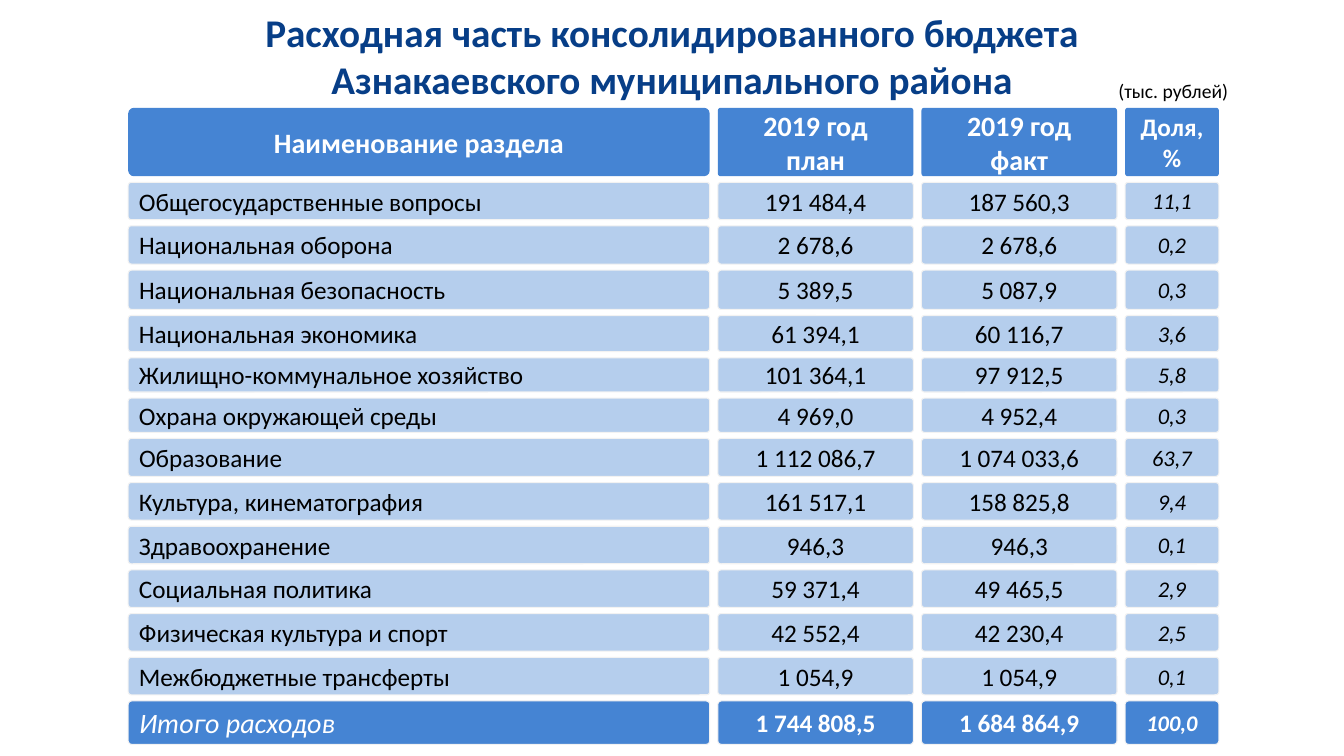
from pptx import Presentation
from pptx.dml.color import RGBColor
from pptx.enum.shapes import MSO_SHAPE
from pptx.enum.text import MSO_ANCHOR, MSO_AUTO_SIZE, PP_ALIGN
from pptx.util import Pt

ROUNDED = MSO_SHAPE.ROUNDED_RECTANGLE
MIDDLE = MSO_ANCHOR.MIDDLE
GROW = MSO_AUTO_SIZE.SHAPE_TO_FIT_TEXT
LEFT, CENTER = PP_ALIGN.LEFT, PP_ALIGN.CENTER

FONT = "Calibri"
COLORS = {
    "title": "073E87",
    "accent": "4584D3",
    "row": "B5CEED",
    "outline": "F2F2F2",
    "light": "FFFFFF",
    "dark": "000000",
}

COLUMN_WIDTHS = [415.4, 139.7, 139.7, 67]
COLUMN_GAP = 5.75
ROW_GAP = 4.4
HEADER_PITCH = 53.3
TOTAL_PITCH = 35.4

HEADINGS = ["Наименование раздела", "2019 год\nплан", "2019 год\nфакт", "Доля, %"]
SECTIONS = [
    (31, ["Общегосударственные вопросы", "191 484,4", "187 560,3", "11,1"]),
    (31.7, ["Национальная оборона", "2 678,6", "2 678,6", "0,2"]),
    (32.4, ["Национальная безопасность", "5 389,5", "5 087,9", "0,3"]),
    (30.2, ["Национальная экономика", "61 394,1", "60 116,7", "3,6"]),
    (28.8, ["Жилищно-коммунальное хозяйство", "101 364,1", "97 912,5", "5,8"]),
    (28.8, ["Охрана окружающей среды", "4 969,0", "4 952,4", "0,3"]),
    (31.5, ["Образование", "1 112 086,7", "1 074 033,6", "63,7"]),
    (31.2, ["Культура, кинематография", "161 517,1", "158 825,8", "9,4"]),
    (31.2, ["Здравоохранение", "946,3", "946,3", "0,1"]),
    (31.2, ["Социальная политика", "59 371,4", "49 465,5", "2,9"]),
    (31.2, ["Физическая культура и спорт", "42 552,4", "42 230,4", "2,5"]),
    (31.2, ["Межбюджетные трансферты", "1 054,9", "1 054,9", "0,1"]),
]
TOTALS = ["Итого расходов", "1 744 808,5", "1 684 864,9", "100,0"]

HEADING_STYLES = [(20, True, False)] * 3 + [(18, True, False)]
SECTION_STYLES = [(18, False, False)] * 3 + [(16, False, True)]
TOTAL_STYLES = [(20, False, True), (18, True, False), (18, True, False), (16, True, True)]


def rgb(name):
    return RGBColor.from_string(COLORS[name])


def write(frame, text, size, color, bold=False, italic=False, align=CENTER):
    frame.text = text
    for paragraph in frame.paragraphs:
        paragraph.alignment = align
        for run in paragraph.runs:
            run.font.name = FONT
            run.font.size = Pt(size)
            run.font.bold = bold
            run.font.italic = italic
            run.font.color.rgb = rgb(color)


def add_caption(slide, box, text, size, color, bold=False):
    caption = slide.shapes.add_textbox(*map(Pt, box))
    frame = caption.text_frame
    frame.word_wrap = False
    frame.auto_size = GROW
    write(frame, text, size, color, bold)


def add_cell(slide, box, text, style, fill, color, align, outlined, corner):
    cell = slide.shapes.add_shape(ROUNDED, *map(Pt, box))
    cell.adjustments[0] = corner
    cell.shadow.inherit = False
    cell.fill.solid()
    cell.fill.fore_color.rgb = rgb(fill)
    if outlined:
        cell.line.color.rgb = rgb("outline")
        cell.line.width = Pt(0.75)
    else:
        cell.line.fill.background()
    frame = cell.text_frame
    frame.word_wrap = True
    frame.vertical_anchor = MIDDLE
    size, bold, italic = style
    write(frame, text, size, color, bold, italic, align)


def add_row(slide, box, texts, styles, fill, color, heading=False):
    left, top, height = box
    for index, (text, style, width) in enumerate(zip(texts, styles, COLUMN_WIDTHS)):
        align = LEFT if index == 0 and not heading else CENTER
        corner = 0.04 if heading and index else 0.083
        add_cell(slide, (left, top, width, height), text, style, fill, color,
                 align, not heading, corner)
        left += width + COLUMN_GAP


def add_budget(slide, left, top):
    add_row(slide, (left, top, HEADER_PITCH - ROW_GAP), HEADINGS, HEADING_STYLES,
            "accent", "light", heading=True)
    top += HEADER_PITCH
    for pitch, texts in SECTIONS:
        add_row(slide, (left, top, pitch - ROW_GAP), texts, SECTION_STYLES, "row", "dark")
        top += pitch
    add_row(slide, (left, top, TOTAL_PITCH - ROW_GAP), TOTALS, TOTAL_STYLES,
            "accent", "light")


def main():
    presentation = Presentation()
    presentation.slide_width = Pt(960)
    presentation.slide_height = Pt(540)
    slide = presentation.slides.add_slide(presentation.slide_layouts[6])
    add_caption(slide, (177.1, 2.2, 605.5, 74.9),
                "Расходная часть консолидированного бюджета\nАзнакаевского муниципального района",
                28, "title", bold=True)
    add_budget(slide, 91.6, 77)
    add_caption(slide, (791.3, 52.6, 93.6, 24.5), "(тыс. рублей)", 14, "dark")
    presentation.save("out.pptx")


if __name__ == "__main__":
    main()
